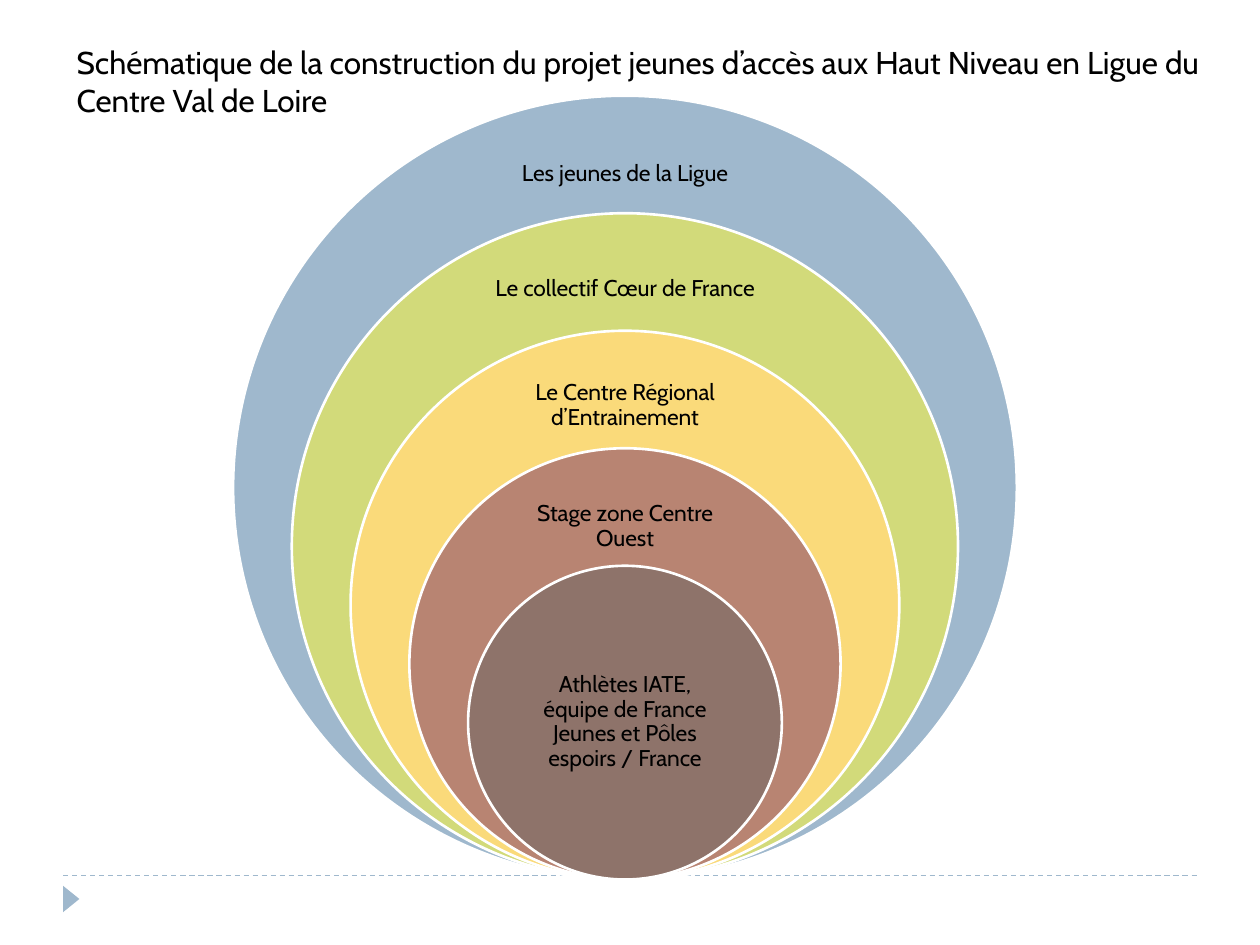
"""Build a slide of nested circles showing the path of young athletes to high level."""
import pptx
import pptx.dml.color
import pptx.enum.dml
import pptx.enum.shapes
import pptx.enum.text
import pptx.util
from lxml import etree
from pptx.util import Inches

COLORS = {
    "blue": "9FB8CD",
    "green": "D2DA7A",
    "yellow": "FADA7A",
    "terracotta": "B88472",
    "brown": "8E736A",
    "white": "FFFFFF",
    "black": "000000",
}
FONT = "Cabin"
CENTER_X = 4.96
BOTTOM = 6.98
LARGEST = 6.22
SMALLEST = 2.49

LEVELS = [
    ("Les jeunes de la Ligue", "blue", 1.07, 2.33, 0.62),
    ("Le collectif Cœur de France", "green", 1.99, 2.28, 0.61),
    ("Le Centre Régional d’Entrainement", "yellow", 2.92, 2.25, 0.6),
    ("Stage zone Centre Ouest", "terracotta", 3.87, 1.85, 0.62),
    ("Athlètes IATE, équipe de France Jeunes et Pôles espoirs / France",
     "brown", 5.11, 1.76, 1.24),
]


def rgb(name):
    return pptx.dml.color.RGBColor.from_string(COLORS[name])


def add_filled_shape(page, kind, left, top, width, height, color):
    shape = page.shapes.add_shape(
        kind, Inches(left), Inches(top), Inches(width), Inches(height))
    shape.shadow.inherit = False
    shape.fill.solid()
    shape.fill.fore_color.rgb = rgb(color)
    shape.line.fill.background()
    return shape


def add_text(page, text, left, top, width, height, size):
    box = page.shapes.add_textbox(
        Inches(left), Inches(top), Inches(width), Inches(height))
    box.text_frame.word_wrap = True
    para = box.text_frame.paragraphs[0]
    span = para.add_run()
    span.text = text
    span.font.name = FONT
    span.font.size = pptx.util.Pt(size)
    span.font.color.rgb = rgb("black")
    return box


def add_circle(page, diameter, color):
    circle = add_filled_shape(
        page, pptx.enum.shapes.MSO_SHAPE.OVAL, CENTER_X - diameter / 2,
        BOTTOM - diameter, diameter, diameter, color)
    circle.line.color.rgb = rgb("white")
    circle.line.width = pptx.util.Pt(1.5)


def add_label(page, text, top, width, height):
    box = add_text(page, text, CENTER_X - width / 2, top, width, height, 13)
    frame = box.text_frame
    frame.vertical_anchor = pptx.enum.text.MSO_ANCHOR.MIDDLE
    frame.margin_left = frame.margin_right = Inches(0.1)
    frame.margin_top = frame.margin_bottom = Inches(0.1)
    para = frame.paragraphs[0]
    para.alignment = pptx.enum.text.PP_ALIGN.CENTER
    para.line_spacing = 0.9


def add_footer(page):
    rule = page.shapes.add_connector(
        pptx.enum.shapes.MSO_CONNECTOR.STRAIGHT,
        Inches(0.5), Inches(6.95), Inches(9.5), Inches(6.95))
    rule.line.color.rgb = rgb("blue")
    rule.line.width = pptx.util.Pt(0.75)
    rule.line.dash_style = pptx.enum.dml.MSO_LINE.DASH
    etree.SubElement(rule._element.spPr, pptx.oxml.ns.qn("a:effectLst"))
    marker = add_filled_shape(
        page, pptx.enum.shapes.MSO_SHAPE.ISOSCELES_TRIANGLE,
        0.46, 7.07, 0.21, 0.13, "blue")
    marker.rotation = 90


def main():
    deck = pptx.Presentation()
    deck.slide_width = Inches(10)
    deck.slide_height = Inches(7.5)
    page = deck.slides.add_slide(deck.slide_layouts[6])
    add_footer(page)
    step = (LARGEST - SMALLEST) / (len(LEVELS) - 1)
    for index, (text, color, top, width, height) in enumerate(LEVELS):
        add_circle(page, LARGEST - index * step, color)
        add_label(page, text, top, width, height)
    add_text(
        page,
        "Schématique de la construction du projet jeunes d’accès aux "
        "Haut Niveau en Ligue du Centre Val de Loire",
        0.51, 0.29, 9.37, 0.71, 18)
    deck.save("out.pptx")


if __name__ == "__main__":
    main()
